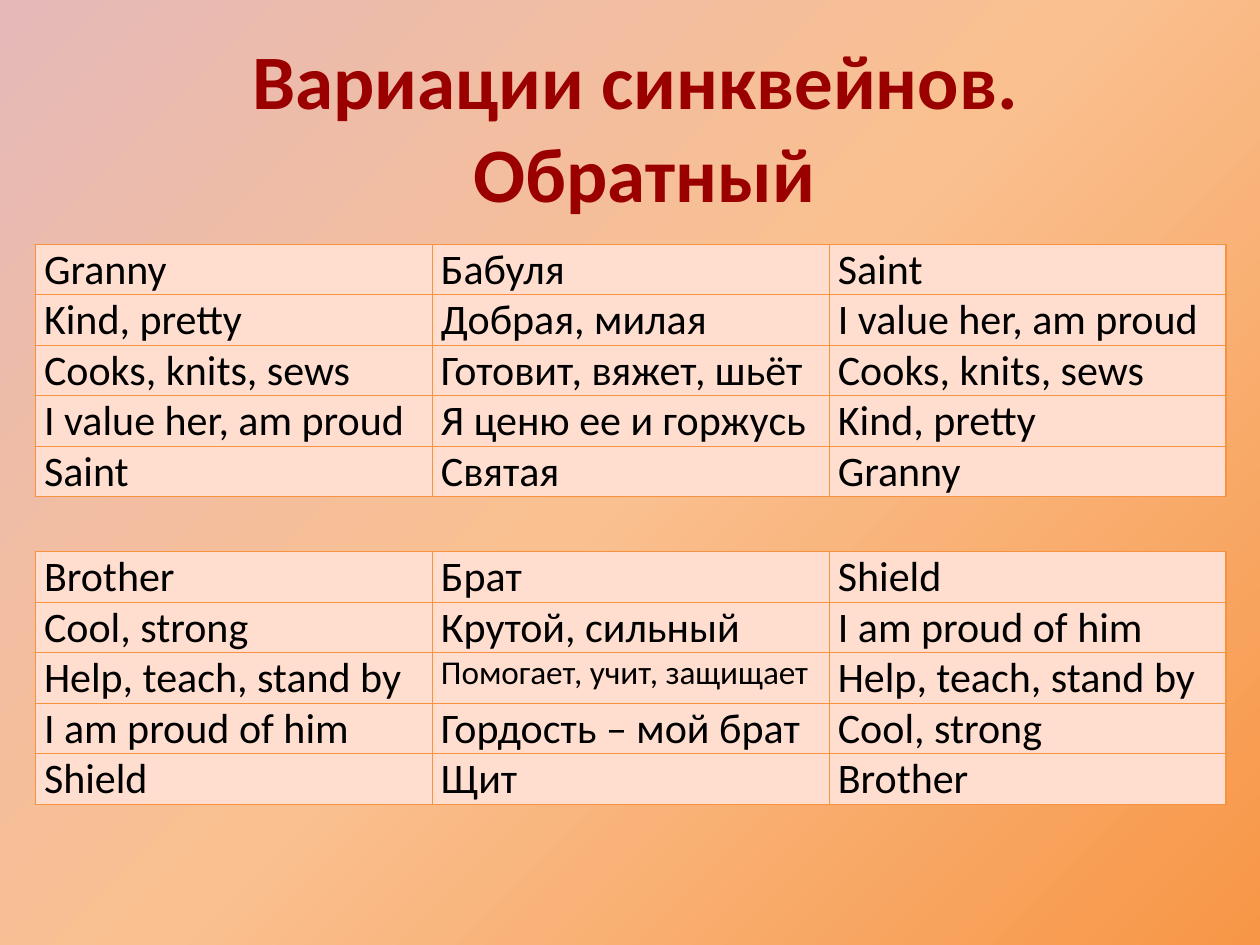
"""Build a slide with two tables of reversed cinquains."""
from dataclasses import dataclass
from pptx import Presentation
from pptx.dml.color import RGBColor
from pptx.enum.text import MSO_ANCHOR, MSO_AUTO_SIZE, PP_ALIGN
from pptx.oxml import parse_xml
from pptx.oxml.ns import nsdecls
from pptx.util import Inches, Pt


@dataclass(frozen=True)
class Theme:
    font: str = "Calibri"
    title: str = "9A0000"
    text: str = "000000"
    cell: str = "FFDED0"
    line: str = "F69240"
    stops: tuple = ((0, "F79646"), (50, "FAC090"), (100, "E6B9B8"))
    head: int = 44
    body: int = 24
    small: int = 19


theme = Theme()


def add_run(para, text, size, color, bold=False):
    run = para.add_run()
    run.text = text
    run.font.name = theme.font
    run.font.size = Pt(size)
    run.font.bold = bold
    run.font.color.rgb = RGBColor.from_string(color)


deck = Presentation()
deck.slide_width, deck.slide_height = Inches(10), Inches(7.5)
slide = deck.slides.add_slide(deck.slide_layouts[5])

fill = slide.background.fill
fill.solid()
stops = "".join(
    f'<a:gs pos="{pos * 1000}"><a:srgbClr val="{color}"/></a:gs>'
    for pos, color in theme.stops
)
solid = slide.element.find(".//{*}bgPr/{*}solidFill")
solid.getparent().replace(solid, parse_xml(
    f'<a:gradFill {nsdecls("a")} rotWithShape="1"><a:gsLst>{stops}</a:gsLst>'
    '<a:path path="circle"><a:fillToRect l="100000" t="100000"/></a:path></a:gradFill>'
))

title = slide.shapes.title
title.left, title.top = Inches(0.23), Inches(0.21)
title.width, title.height = Inches(9.77), Inches(1.58)
frame = title.text_frame
frame.word_wrap = True
frame.auto_size = MSO_AUTO_SIZE.SHAPE_TO_FIT_TEXT
frame.vertical_anchor = MSO_ANCHOR.TOP
for para, text in (
    (frame.paragraphs[0], "Вариации синквейнов. "),
    (frame.add_paragraph(), "Обратный"),
):
    para.alignment = PP_ALIGN.CENTER
    add_run(para, text, theme.head, theme.title, True)

poems = (
    (1.94,
     ("Granny", "Kind, pretty", "Cooks, knits, sews", "I value her, am proud", "Saint"),
     ("Бабуля", "Добрая, милая", "Готовит, вяжет, шьёт", "Я ценю ее и горжусь", "Святая")),
    (4.38,
     ("Brother", "Cool, strong", "Help, teach, stand by", "I am proud of him", "Shield"),
     ("Брат", "Крутой, сильный", "Помогает, учит, защищает", "Гордость – мой брат", "Щит")),
)
for top, lines, russian in poems:
    table = slide.shapes.add_table(
        len(lines), 3, Inches(0.28), Inches(top), Inches(9.45), Inches(2)
    ).table
    table.first_row = table.horz_banding = False
    for row, texts in enumerate(zip(lines, russian, reversed(lines))):
        for col, text in enumerate(texts):
            cell = table.cell(row, col)
            cell.margin_left = cell.margin_right = Inches(0.07)
            cell.margin_top = cell.margin_bottom = 0
            cell.fill.solid()
            cell.fill.fore_color.rgb = RGBColor.from_string(theme.cell)
            for at, side in enumerate("LRTB"):
                cell.fill._xPr.insert(at, parse_xml(
                    f'<a:ln{side} {nsdecls("a")} w="{Pt(0.75)}"><a:solidFill>'
                    f'<a:srgbClr val="{theme.line}"/></a:solidFill></a:ln{side}>'
                ))
            size = theme.small if len(text) > 22 else theme.body
            add_run(cell.text_frame.paragraphs[0], text, size, theme.text)

deck.save("out.pptx")
